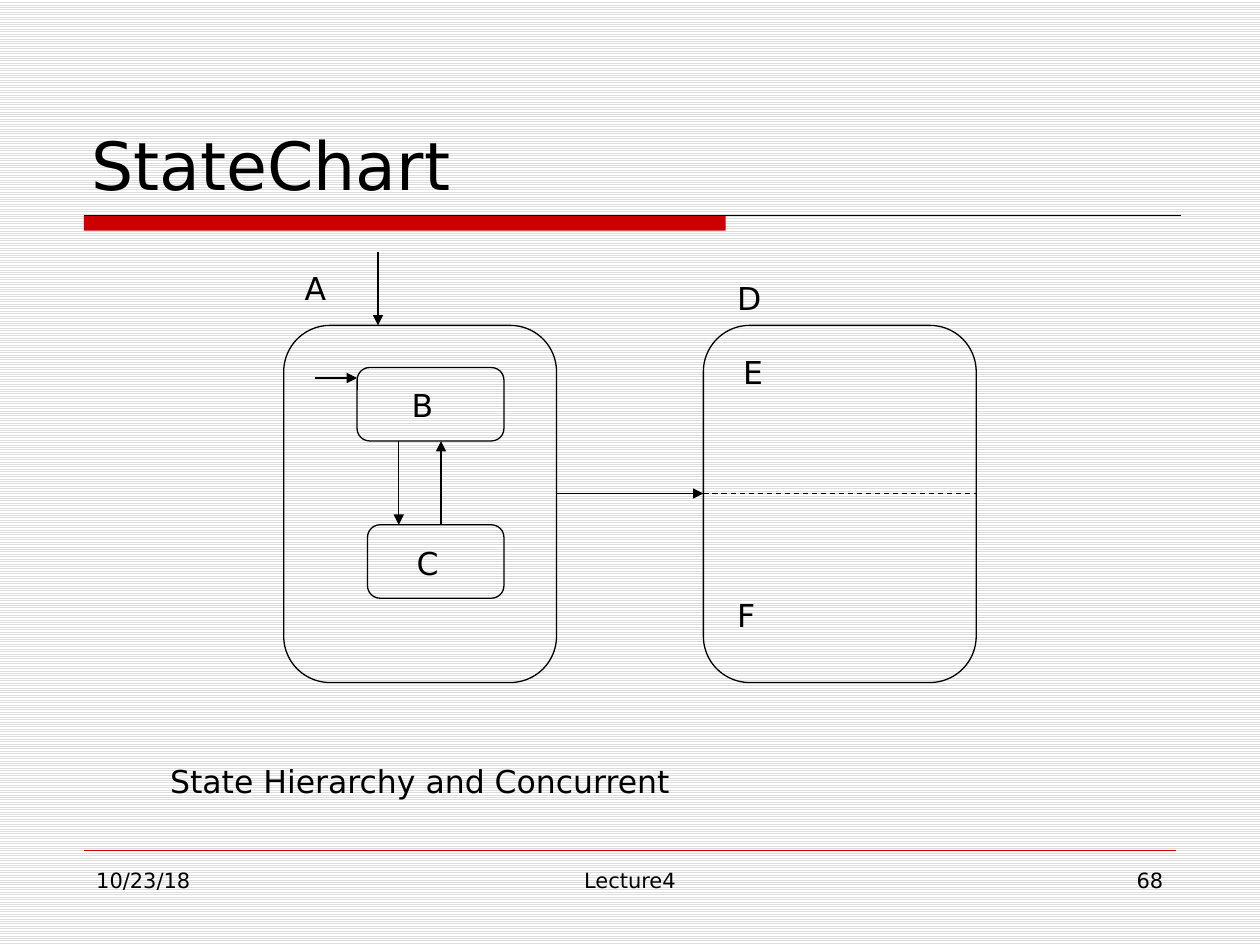
from lxml import etree
from pptx import Presentation
from pptx import util as u
from pptx.dml.color import RGBColor
from pptx.enum import dml, shapes, text
from pptx.oxml.ns import qn


def color(value):
    return RGBColor.from_string(value)


class StateChartSlide:
    font = "DejaVu Sans"
    ink = "000000"
    accent = "CC0000"
    line_width = 0.75

    def __init__(self, presentation):
        self.slide = presentation.slides.add_slide(presentation.slide_layouts[5])

    def background(self, fore, back):
        fill = self.slide.background.fill
        fill.patterned()
        fill.pattern = dml.MSO_PATTERN.LIGHT_HORIZONTAL
        fill.fore_color.rgb = color(fore)
        fill.back_color.rgb = color(back)

    def add_words(self, shape, words, size, align):
        paragraph = shape.text_frame.paragraphs[0]
        paragraph.alignment = align
        run = paragraph.add_run()
        run.text = words
        run.font.name = self.font
        run.font.size = u.Pt(size)
        run.font.color.rgb = color(self.ink)

    def title(self, words, left, top, width, height):
        shape = self.slide.shapes.title
        shape.left, shape.top = u.Cm(left), u.Cm(top)
        shape.width, shape.height = u.Cm(width), u.Cm(height)
        shape.text_frame.vertical_anchor = text.MSO_ANCHOR.BOTTOM
        self.add_words(shape, words, 38, text.PP_ALIGN.LEFT)

    def text_box(self, words, left, top, width, height=1.02, size=18,
                 align=text.PP_ALIGN.LEFT, wrap=True):
        shape = self.slide.shapes.add_textbox(
            u.Cm(left), u.Cm(top), u.Cm(width), u.Cm(height))
        shape.text_frame.word_wrap = wrap
        self.add_words(shape, words, size, align)

    def bar(self, left, top, width, height):
        shape = self.slide.shapes.add_shape(
            shapes.MSO_SHAPE.RECTANGLE,
            u.Cm(left), u.Cm(top), u.Cm(width), u.Cm(height))
        shape.shadow.inherit = False
        shape.fill.solid()
        shape.fill.fore_color.rgb = color(self.accent)
        shape.line.fill.background()

    def state(self, left, top, width, height):
        shape = self.slide.shapes.add_shape(
            shapes.MSO_SHAPE.ROUNDED_RECTANGLE,
            u.Cm(left), u.Cm(top), u.Cm(width), u.Cm(height))
        shape.adjustments[0] = 0.17
        shape.shadow.inherit = False
        shape.fill.background()
        shape.line.color.rgb = color(self.ink)
        shape.line.width = u.Pt(self.line_width)

    def line(self, x1, y1, x2, y2, stroke=ink, width=line_width, dashed=False):
        connector = self.slide.shapes.add_connector(
            shapes.MSO_CONNECTOR.STRAIGHT, u.Cm(x1), u.Cm(y1), u.Cm(x2), u.Cm(y2))
        connector.line.color.rgb = color(stroke)
        connector.line.width = u.Pt(width)
        if dashed:
            connector.line.dash_style = dml.MSO_LINE.DASH
        properties = connector.element.spPr
        etree.SubElement(properties, qn("a:effectLst"))
        return connector

    def arrow(self, x1, y1, x2, y2):
        connector = self.line(x1, y1, x2, y2)
        outline = connector.element.spPr.find(qn("a:ln"))
        etree.SubElement(outline, qn("a:tailEnd"), type="triangle")


def main():
    presentation = Presentation()
    presentation.slide_width = u.Cm(25.4)
    presentation.slide_height = u.Cm(19.05)

    chart = StateChartSlide(presentation)
    chart.background("DDDDDD", "FFFFFF")

    margin, rule_top = 1.69, 4.34
    chart.bar(margin, rule_top, 12.94, 0.31)
    chart.line(margin, rule_top, 23.81, rule_top)
    chart.line(margin, 17.14, 23.71, 17.14, chart.accent, 0.25)

    for words, left, width, align in (
        ("10/23/18", margin, 5.5, text.PP_ALIGN.LEFT),
        ("Lecture4", 8.68, 8.04, text.PP_ALIGN.CENTER),
        ("68", 18.2, 5.5, text.PP_ALIGN.RIGHT),
    ):
        chart.text_box(words, left, 17.36, width, 1.32, 12, align)

    chart.title("StateChart", 1.59, 0.85, 22.23, 3.39)
    chart.text_box("State Hierarchy and Concurrent", 3.18, 15.24, 16.72)

    a_left, d_left, outer_top = 5.72, 14.18, 6.56
    outer_width, outer_height = 5.5, 7.2
    b_left, b_top, c_left, c_top = 7.2, 7.41, 7.41, 10.58
    inner_right, inner_height = 10.16, 1.48

    for left in (a_left, d_left):
        chart.state(left, outer_top, outer_width, outer_height)
    for left, top in ((b_left, b_top), (c_left, c_top)):
        chart.state(left, top, inner_right - left, inner_height)

    for name, left, top in (
        ("A", 5.89, 5.29),
        ("B", 8.05, 7.66),
        ("C", 8.15, 10.84),
        ("F", 14.61, 11.89),
        ("E", 14.73, 6.99),
        ("D", 14.61, 5.51),
    ):
        chart.text_box(name, left, top, 0.94, wrap=False)

    b_bottom, middle = b_top + inner_height, 9.95
    chart.arrow(8.04, b_bottom, 8.04, c_top)
    chart.arrow(8.89, c_top, 8.89, b_bottom)
    chart.arrow(a_left + outer_width, middle, d_left, middle)
    chart.line(d_left, middle, d_left + outer_width, middle, dashed=True)
    chart.arrow(7.62, 5.08, 7.62, outer_top)
    chart.arrow(6.35, 7.62, b_left, 7.62)

    presentation.save("out.pptx")


if __name__ == "__main__":
    main()
